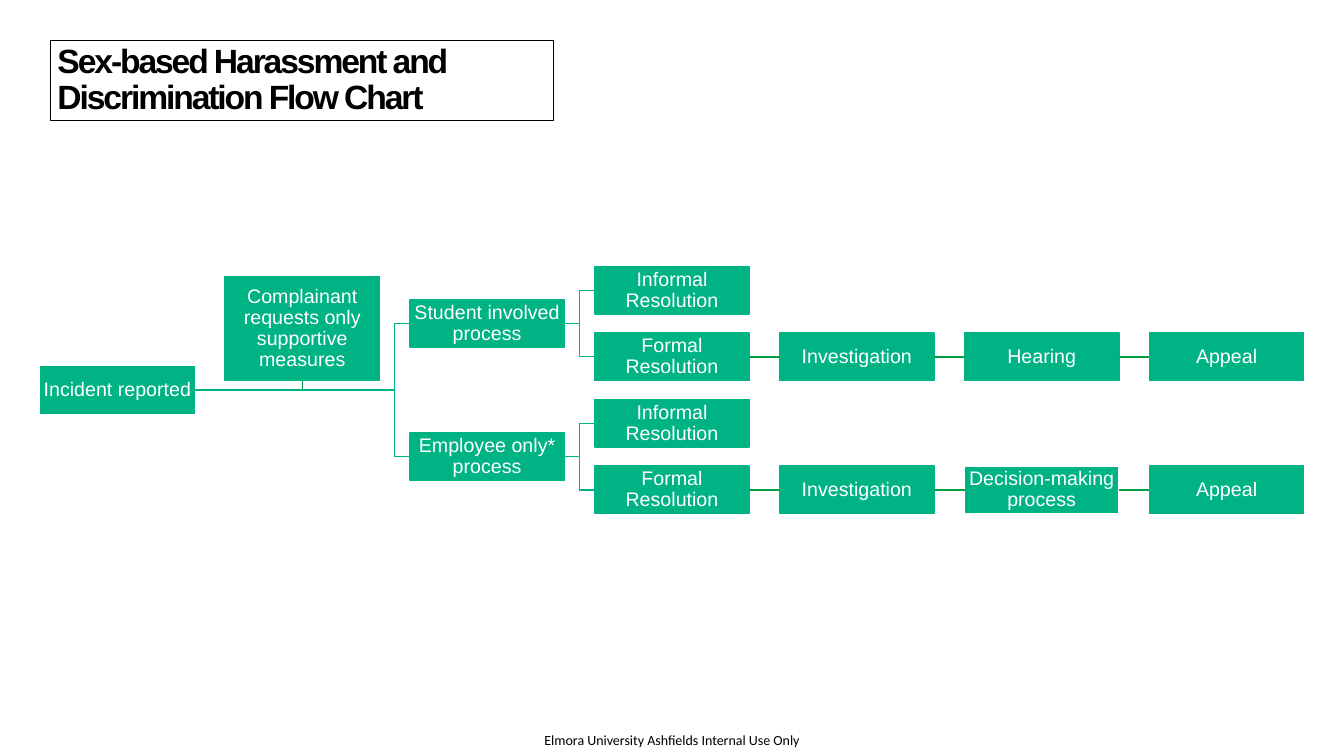
from dataclasses import dataclass

from lxml import etree
from pptx import Presentation
from pptx.dml.color import RGBColor
from pptx.enum.shapes import MSO_CONNECTOR, MSO_SHAPE
from pptx.enum.text import MSO_ANCHOR, PP_ALIGN
from pptx.oxml.ns import qn
from pptx.shapes.autoshape import Shape
from pptx.util import Inches, Pt

RECTANGLE = MSO_SHAPE.RECTANGLE
STRAIGHT = MSO_CONNECTOR.STRAIGHT
TOP, MIDDLE = MSO_ANCHOR.TOP, MSO_ANCHOR.MIDDLE
LEFT, CENTER = PP_ALIGN.LEFT, PP_ALIGN.CENTER
LEFT_SIDE, RIGHT_SIDE = 1, 3

COLORS = {
    "step": "00B385",
    "chain": "00A049",
    "support": "008D40",
    "paper": "FFFFFF",
    "ink": "000000",
}

SLIDE_W, SLIDE_H = 13.33, 7.5
GRID_LEFT, COLUMN = 0.4, 1.8335   # left edge of column 0, column pitch
GRID_TOP, ROW = 2.88, 0.33        # middle of row 0, row pitch
STEP_W, STEP_H = 1.53, 0.47
SUPPORT_H = 1.03
GUTTER = COLUMN - STEP_W


@dataclass(frozen=True)
class Step:
    label: str
    column: int
    row: int
    height: float = STEP_H
    border: str = "step"

    @property
    def left(self) -> float:
        return GRID_LEFT + self.column * COLUMN

    @property
    def right(self) -> float:
        return self.left + STEP_W

    @property
    def middle(self) -> float:
        return GRID_TOP + self.row * ROW

    @property
    def bottom(self) -> float:
        return self.middle + STEP_H / 2

    @property
    def top(self) -> float:
        """Taller steps grow upward from the bottom of their row."""
        return self.bottom - self.height


INCIDENT = Step("Incident reported", 0, 3)
SUPPORT = Step("Complainant requests only supportive measures", 1, 2, SUPPORT_H)
STUDENT = Step("Student involved process", 2, 1)
EMPLOYEE = Step("Employee only* process", 2, 5)
STUDENT_INFORMAL = Step("Informal Resolution", 3, 0)
EMPLOYEE_INFORMAL = Step("Informal Resolution", 3, 4)
STUDENT_CHAIN = [
    Step("Formal Resolution", 3, 2),
    Step("Investigation", 4, 2),
    Step("Hearing", 5, 2),
    Step("Appeal", 6, 2),
]
EMPLOYEE_CHAIN = [
    Step("Formal Resolution", 3, 6),
    Step("Investigation", 4, 6),
    Step("Decision-making process", 5, 6, border="paper"),
    Step("Appeal", 6, 6),
]
CHAINS = [STUDENT_CHAIN, EMPLOYEE_CHAIN]
STEPS = [INCIDENT, STUDENT, STUDENT_INFORMAL, *STUDENT_CHAIN,
         EMPLOYEE, EMPLOYEE_INFORMAL, *EMPLOYEE_CHAIN, SUPPORT]
BRANCHES = [
    (INCIDENT, STUDENT),
    (INCIDENT, EMPLOYEE),
    (STUDENT, STUDENT_INFORMAL),
    (STUDENT, STUDENT_CHAIN[0]),
    (EMPLOYEE, EMPLOYEE_INFORMAL),
    (EMPLOYEE, EMPLOYEE_CHAIN[0]),
]


def color(name: str) -> RGBColor:
    return RGBColor.from_string(COLORS[name])


def write(shape: Shape, words: str, size: float, ink: str, font: str = "Arial",
          align=CENTER, anchor=MIDDLE, inset_x: float = 0.01,
          inset_y: float = 0.01, line_spacing: float = 0.9):
    """Fill a shape with one paragraph and return its run."""
    frame = shape.text_frame
    frame.text = words
    frame.word_wrap = True
    frame.vertical_anchor = anchor
    frame.margin_left = frame.margin_right = Inches(inset_x)
    frame.margin_top = frame.margin_bottom = Inches(inset_y)
    paragraph = frame.paragraphs[0]
    paragraph.alignment = align
    paragraph.line_spacing = line_spacing
    run = paragraph.runs[0]
    run.font.name = font
    run.font.size = Pt(size)
    run.font.color.rgb = color(ink)
    return run


def add_box(slide, left: float, top: float, width: float, height: float,
            fill: str, border: str, border_width: float = 1) -> Shape:
    box = slide.shapes.add_shape(RECTANGLE, Inches(left), Inches(top),
                                 Inches(width), Inches(height))
    box.shadow.inherit = False
    box.fill.solid()
    box.fill.fore_color.rgb = color(fill)
    box.line.color.rgb = color(border)
    box.line.width = Pt(border_width)
    return box


def add_bent_line(slide, points: list[tuple[float, float]], ink: str) -> None:
    start, *corners = [(Inches(x), Inches(y)) for x, y in points]
    builder = slide.shapes.build_freeform(*start)
    builder.add_line_segments(corners, close=False)
    bent = builder.convert_to_shape()
    bent.shadow.inherit = False
    bent.fill.background()
    bent.line.color.rgb = color(ink)
    bent.line.width = Pt(1)


def add_branch(slide, source: Step, target: Step) -> None:
    """Run along the source's row, then turn in the gutter before the target."""
    turn = target.left - GUTTER / 2
    add_bent_line(slide, [(source.right, source.middle), (turn, source.middle),
                          (turn, target.middle), (target.left, target.middle)], "step")


def add_chain_link(slide, source: Shape, target: Shape) -> None:
    link = slide.shapes.add_connector(STRAIGHT, 0, 0, 0, 0)
    link.begin_connect(source, RIGHT_SIDE)
    link.end_connect(target, LEFT_SIDE)
    link.line.color.rgb = color("chain")
    link.line.width = Pt(1)
    etree.SubElement(link._element.spPr, qn("a:effectLst"))


def add_title(slide) -> None:
    title = add_box(slide, 0.5, 0.4, 4.99, 0.8, "paper", "ink", 0.75)
    run = write(title, "Sex-based Harassment and Discrimination Flow Chart", 24, "ink",
                align=LEFT, anchor=TOP, inset_x=0.07, inset_y=0.04)
    run.font.bold = True
    run.font._element.set("spc", "-150")


def add_footer(slide) -> None:
    footer = slide.shapes.add_textbox(Inches(5.4), Inches(7.26), Inches(2.57), Inches(0.17))
    write(footer, "Elmora University Ashfields Internal Use Only", 10, "ink", "Calibri",
          align=LEFT, anchor=TOP, inset_x=0, inset_y=0, line_spacing=1.0)
    footer.text_frame.word_wrap = False


def main() -> None:
    deck = Presentation()
    deck.slide_width, deck.slide_height = Inches(SLIDE_W), Inches(SLIDE_H)
    slide = deck.slides.add_slide(deck.slide_layouts[6])

    add_footer(slide)
    support_center = SUPPORT.left + STEP_W / 2
    add_bent_line(slide, [(INCIDENT.right, INCIDENT.middle),
                          (support_center, INCIDENT.middle),
                          (support_center, SUPPORT.bottom)], "support")
    for source, target in BRANCHES:
        add_branch(slide, source, target)

    boxes: dict[Step, Shape] = {}
    for step in STEPS:
        boxes[step] = add_box(slide, step.left, step.top, STEP_W, step.height,
                              "step", step.border)
        write(boxes[step], step.label, 14, "paper")
    for chain in CHAINS:
        for source, target in zip(chain, chain[1:]):
            add_chain_link(slide, boxes[source], boxes[target])

    add_title(slide)
    deck.save("out.pptx")


if __name__ == "__main__":
    main()
